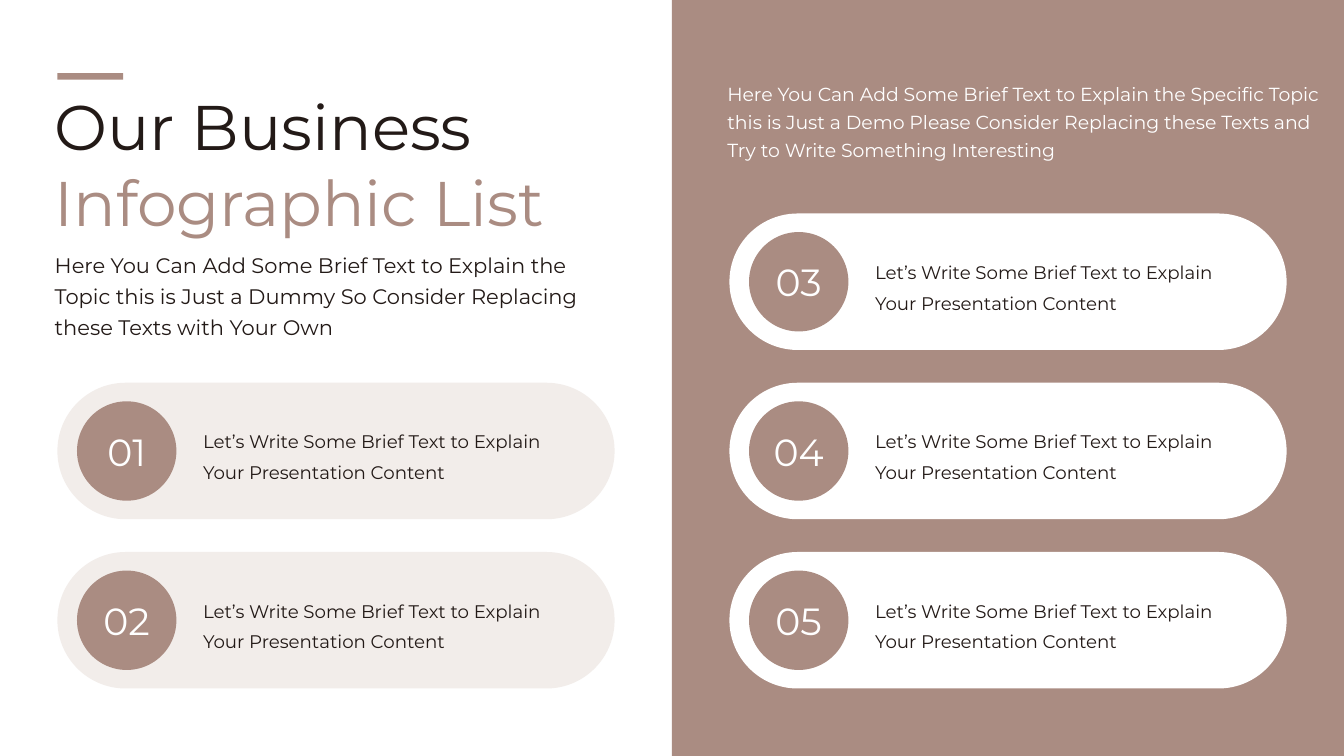
from pptx import Presentation
from pptx.dml.color import RGBColor
from pptx.enum.shapes import MSO_SHAPE
from pptx.enum.text import MSO_ANCHOR, PP_ALIGN
from pptx.util import Pt

BROWN = RGBColor(0xAA, 0x8C, 0x82)
CREAM = RGBColor(0xF2, 0xED, 0xEA)
DARK = RGBColor(0x23, 0x1A, 0x17)
WHITE = RGBColor(0xFF, 0xFF, 0xFF)
FONT = "Montserrat"

PAGE_WIDTH, PAGE_HEIGHT = 960, 540
HALF = PAGE_WIDTH / 2
CARD_LEFT, CARD_TOP, CARD_STEP = 41, 152.5, 120.9
CARD_WIDTH, CARD_HEIGHT = 398, 97.5
BADGE_SIZE = 71

# Number, column, row, card colour
CARDS = [
    ("01", 0, 1, CREAM),
    ("02", 0, 2, CREAM),
    ("03", 1, 0, WHITE),
    ("04", 1, 1, WHITE),
    ("05", 1, 2, WHITE),
]
CARD_LINES = ["Let’s Write Some Brief Text to Explain", "Your Presentation Content"]


def add_filled(page, kind, left, top, width, height, color):
    shape = page.shapes.add_shape(kind, Pt(left), Pt(top), Pt(width), Pt(height))
    shape.shadow.inherit = False
    shape.fill.solid()
    shape.fill.fore_color.rgb = color
    shape.line.fill.background()
    return shape


def write_lines(frame, lines, size, colors, spacing=None, align=PP_ALIGN.LEFT):
    """Write one paragraph per line; colors holds one colour per line."""
    for index, (line, color) in enumerate(zip(lines, colors)):
        para = frame.paragraphs[0] if index == 0 else frame.add_paragraph()
        para.alignment = align
        if spacing:
            para.line_spacing = Pt(spacing)
        span = para.add_run()
        span.text = line
        span.font.name = FONT
        span.font.size = Pt(size)
        span.font.color.rgb = color


def add_text(page, left, top, width, height, lines, **style):
    box = page.shapes.add_textbox(Pt(left), Pt(top), Pt(width), Pt(height))
    box.text_frame.word_wrap = True
    write_lines(box.text_frame, lines, **style)


def add_badge(page, left, top, number):
    badge = add_filled(page, MSO_SHAPE.OVAL, left, top, BADGE_SIZE, BADGE_SIZE, BROWN)
    frame = badge.text_frame
    frame.word_wrap = False
    frame.vertical_anchor = MSO_ANCHOR.MIDDLE
    write_lines(frame, [number], size=27, colors=[WHITE], align=PP_ALIGN.CENTER)


def add_card(page, number, column, row, color):
    left = CARD_LEFT + column * HALF
    top = CARD_TOP + row * CARD_STEP
    card = add_filled(page, MSO_SHAPE.ROUNDED_RECTANGLE, left, top,
                      CARD_WIDTH, CARD_HEIGHT, color)
    card.adjustments[0] = 0.5
    add_badge(page, left + 14, top + (CARD_HEIGHT - BADGE_SIZE) / 2, number)
    add_text(page, left + 97, top + 24.3, 262, 50, CARD_LINES,
             size=13, colors=[DARK] * 2, spacing=22)


def main():
    deck = Presentation()
    deck.slide_width, deck.slide_height = Pt(PAGE_WIDTH), Pt(PAGE_HEIGHT)
    page = deck.slides.add_slide(deck.slide_layouts[6])
    page.background.fill.solid()
    page.background.fill.fore_color.rgb = WHITE

    # Right panel and accent bar
    add_filled(page, MSO_SHAPE.RECTANGLE, HALF, 0, HALF, PAGE_HEIGHT, BROWN)
    add_filled(page, MSO_SHAPE.RECTANGLE, CARD_LEFT, 52.3, 47, 4.7, BROWN)

    # Title and introductions
    add_text(page, 32, 59, 396, 117, ["Our Business", "Infographic List"],
             size=45, colors=[DARK, BROWN])
    add_text(page, 32, 173, 396, 72,
             ["Here You Can Add Some Brief Text to Explain the",
              "Topic this is Just a Dummy So Consider Replacing",
              "these Texts with Your Own"],
             size=15, colors=[DARK] * 3, spacing=22)
    add_text(page, 512.5, 52, 441, 66,
             ["Here You Can Add Some Brief Text to Explain the Specific Topic "
              "this is Just a Demo Please Consider Replacing these Texts and "
              "Try to Write Something Interesting"],
             size=13.5, colors=[WHITE], spacing=20)

    # Numbered cards
    for card in CARDS:
        add_card(page, *card)

    deck.save("out.pptx")


if __name__ == "__main__":
    main()
